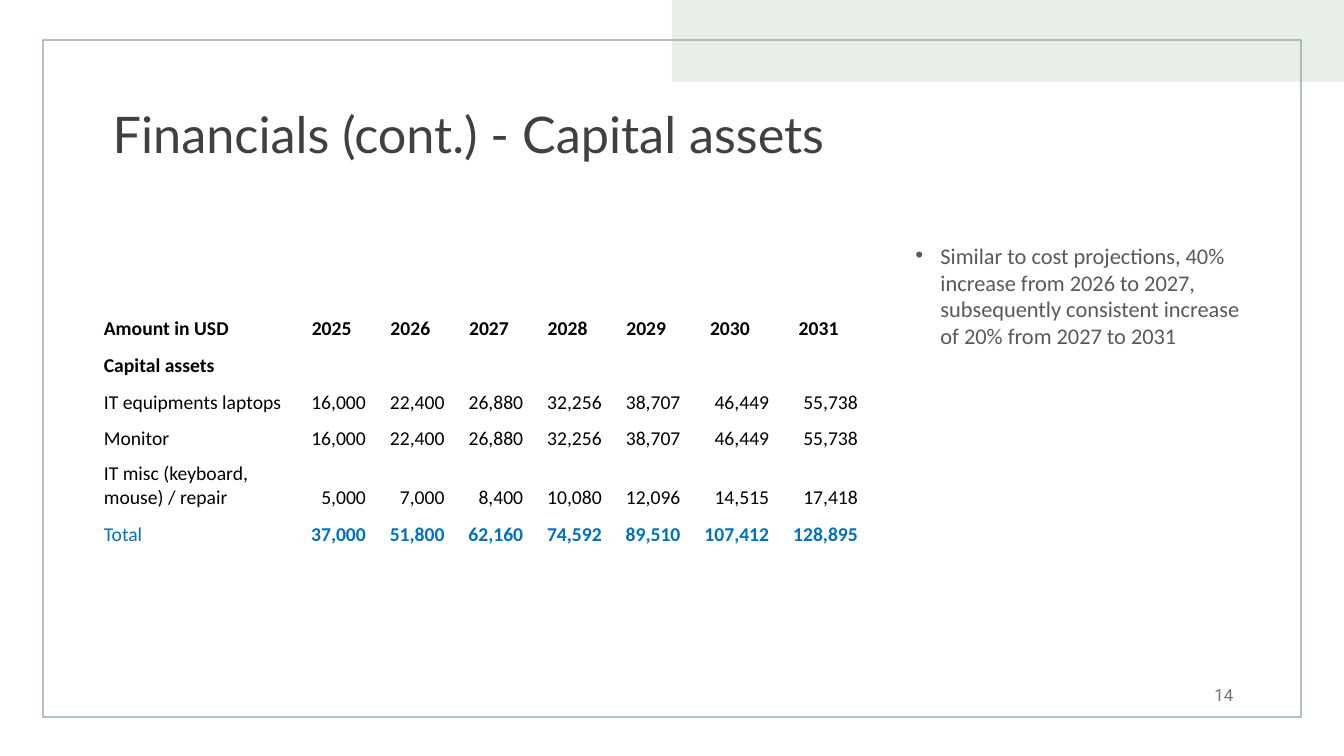
from lxml.etree import SubElement
from pptx import Presentation
from pptx.dml.color import RGBColor
from pptx.enum.shapes import MSO_SHAPE
from pptx.enum.text import MSO_ANCHOR, PP_ALIGN
from pptx.oxml.ns import qn
from pptx.util import Inches, Pt

WIDTH, HEIGHT = 13.33, 7.5
MARGIN = 1.02
COLORS = {
    "band": "E7EEE8",
    "frame": "88A88E",
    "title": "404040",
    "body": "595959",
    "number": "767171",
    "table": "000000",
    "total": "0070C0",
}
COLUMNS = [1.88] + [0.78] * 5 + [0.88] * 2
ROWS = [0.36] * 4 + [0.59, 0.36]
EQUIPMENT = [16000, 22400, 26880, 32256, 38707, 46449, 55738]
ASSETS = [
    ["Amount in USD", *map(str, range(2025, 2032))],
    ["Capital assets"] + [""] * 7,
    ["IT equipments laptops", *EQUIPMENT],
    ["Monitor", *EQUIPMENT],
    ["IT misc (keyboard, mouse) / repair", 5000, 7000, 8400, 10080, 12096, 14515, 17418],
    ["Total", 37000, 51800, 62160, 74592, 89510, 107412, 128895],
]


def write_text(frame, text, *, size, color, font="Calibri", bold=False,
               align=PP_ALIGN.LEFT, line=None, before=0, after=0):
    """Write one formatted paragraph and return it."""
    frame.word_wrap = True
    paragraph = frame.paragraphs[0]
    paragraph.alignment = align
    paragraph.line_spacing = line
    paragraph.space_before, paragraph.space_after = Pt(before), Pt(after)
    run = paragraph.add_run()
    run.text = text
    run.font.name, run.font.size, run.font.bold = font, Pt(size), bold
    run.font.color.rgb = RGBColor.from_string(COLORS[color])
    return paragraph


def add_text(slide, box, text, anchor=MSO_ANCHOR.TOP, **style):
    """Add a text box and return its paragraph."""
    frame = slide.shapes.add_textbox(*map(Inches, box)).text_frame
    frame.vertical_anchor = anchor
    return write_text(frame, text, **style)


def add_panel(slide, kind, box, color):
    """Add a plain filled shape without an outline."""
    shape = slide.shapes.add_shape(kind, *map(Inches, box))
    shape.shadow.inherit = False
    shape.fill.solid()
    shape.fill.fore_color.rgb = RGBColor.from_string(COLORS[color])
    shape.line.fill.background()
    return shape


def add_backdrop(slide, box):
    """Draw the corner band and the thin frame across the given box."""
    left, top, width, height = box
    add_panel(slide, MSO_SHAPE.RECTANGLE,
              (left + width / 2, top, width / 2, height * 0.108), "band")
    side, edge = 0.42, 0.39
    frame = add_panel(slide, MSO_SHAPE.FRAME,
                      (left + side, top + edge, width - 2 * side, height - 2 * edge + 0.01), "frame")
    frame.adjustments[0] = 0.002


def add_note(slide, box, text):
    """Add a bulleted remark with a hanging indent."""
    paragraph = add_text(slide, box, text, size=16, color="body", before=10, after=12)
    properties = paragraph._p.get_or_add_pPr()
    properties.set("marL", str(Inches(0.25)))
    properties.set("indent", str(-Inches(0.25)))
    SubElement(properties, qn("a:buFont")).set("typeface", "Arial")
    SubElement(properties, qn("a:buChar")).set("char", "•")


def fill_cell(cell, value, row, column):
    """Format one cell by its row, column and kind of value."""
    is_amount = isinstance(value, int)
    is_total = row == len(ROWS) - 1
    cell.fill.background()
    cell.vertical_anchor = MSO_ANCHOR.BOTTOM
    cell.margin_left = cell.margin_top = Inches(0.01)
    cell.margin_right = Inches(0.05 if is_amount else 0.01)
    cell.margin_bottom = Inches(0.06)
    if is_amount:
        align = PP_ALIGN.RIGHT
    else:
        align = PP_ALIGN.CENTER if column else PP_ALIGN.LEFT
    write_text(cell.text_frame, f"{value:,}" if is_amount else value, size=14,
               color="total" if is_total else "table",
               bold=row < 2 or (is_total and is_amount), align=align)


def add_assets_table(slide, left, top):
    """Add the table of capital assets by year."""
    box = map(Inches, (left, top, sum(COLUMNS), sum(ROWS)))
    table = slide.shapes.add_table(len(ROWS), len(COLUMNS), *box).table
    table.first_row = table.horz_banding = False
    for column, width in zip(table.columns, COLUMNS):
        column.width = Inches(width)
    for row_index, (height, values) in enumerate(zip(ROWS, ASSETS)):
        table.rows[row_index].height = Inches(height)
        for column_index, value in enumerate(values):
            fill_cell(table.cell(row_index, column_index), value, row_index, column_index)


def build_financials(slide, box):
    """Place all regions of the financials slide in the given box."""
    left, top, width, height = box
    add_backdrop(slide, box)
    add_text(slide, (left + MARGIN, top + 0.53, 11.5, 1.67),
             "Financials (cont.) - Capital assets", anchor=MSO_ANCHOR.MIDDLE,
             size=36, color="title", font="Lato", line=0.9)
    add_note(slide, (left + 8.98, top + 2.35, 3.53, 3.83),
             "Similar to cost projections, 40% increase from 2026 to 2027, "
             "subsequently consistent increase of 20% from 2027 to 2031")
    add_text(slide, (left + width - 4, top + height - 0.81, 3, 0.4), "14",
             anchor=MSO_ANCHOR.MIDDLE, size=12, color="number", font="Roboto",
             align=PP_ALIGN.RIGHT, after=6)
    add_assets_table(slide, left + MARGIN, top + 3.08)


def main():
    """Build and save the presentation."""
    presentation = Presentation()
    presentation.slide_width, presentation.slide_height = Inches(WIDTH), Inches(HEIGHT)
    slide = presentation.slides.add_slide(presentation.slide_layouts[6])
    build_financials(slide, (0, 0, WIDTH, HEIGHT))
    presentation.save("out.pptx")


if __name__ == "__main__":
    main()
